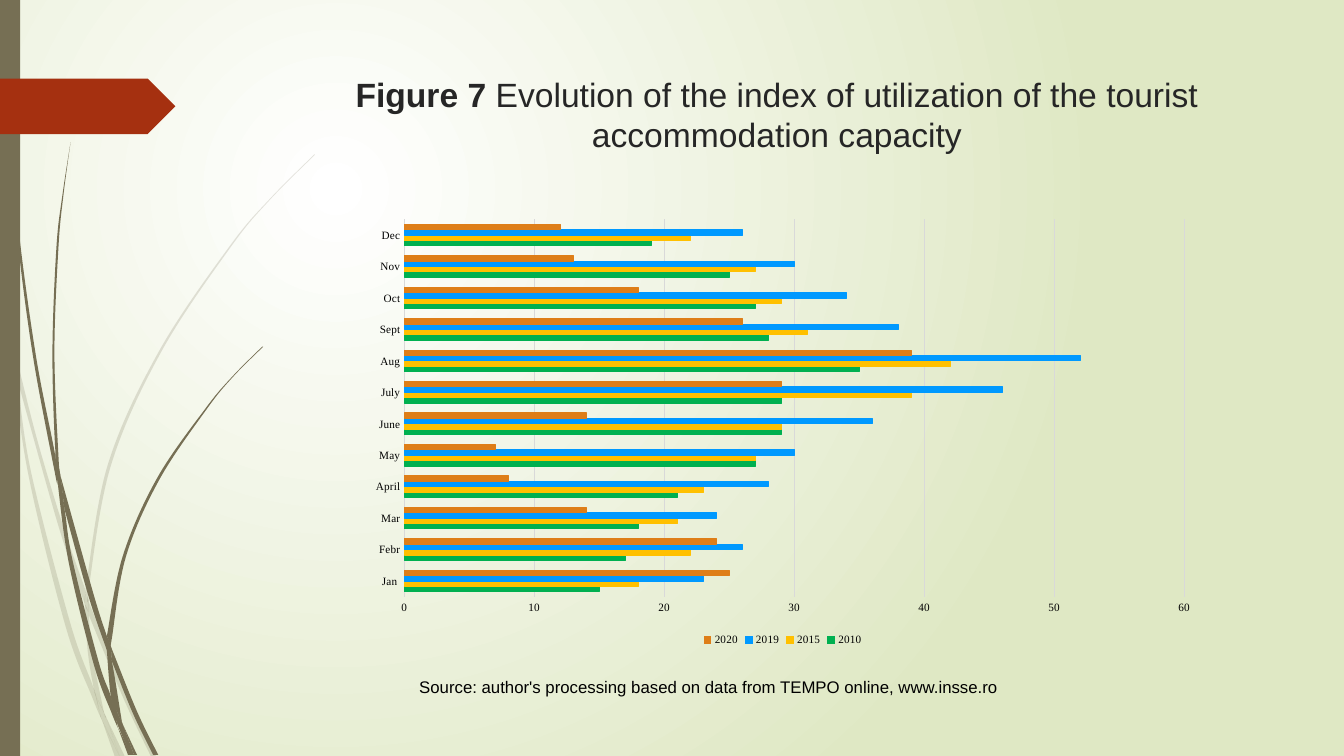
import pptx
import pptx.chart.data
import pptx.dml.color
import pptx.enum.chart
import pptx.enum.shapes
import pptx.enum.text
import pptx.oxml
import pptx.oxml.ns
import pptx.util

Inches, Pt = pptx.util.Inches, pptx.util.Pt
WIDTH, HEIGHT = Inches(13.33), Inches(7.5)
BROWN, RED, GREY, BLACK = "766F54", "A53010", "D9D9D9", "000000"


def paint(color_format, value):
    color_format.rgb = pptx.dml.color.RGBColor.from_string(value)


def bend(side, segments):
    """Turn the straight segments along one side into a smooth curve."""
    padded = [side[0], *side, side[-1]]
    for before, start, end, after, segment in zip(
            padded, padded[1:], padded[2:], padded[3:], segments):
        corner = segment[0]
        end_x, end_y = int(corner.get("x")), int(corner.get("y"))
        dx, dy = (end_x - Inches(end[0]), end_y - Inches(end[1]))
        controls = [
            (start[0] + (end[0] - before[0]) / 6, start[1] + (end[1] - before[1]) / 6),
            (end[0] - (after[0] - start[0]) / 6, end[1] - (after[1] - start[1]) / 6)]
        points = [(Inches(x) + dx, Inches(y) + dy) for x, y in controls]
        marks = "".join(f'<a:pt x="{x}" y="{y}"/>' for x, y in [*points, (end_x, end_y)])
        segment.getparent().replace(segment, pptx.oxml.parse_xml(
            f'<a:cubicBezTo {pptx.oxml.ns.nsdecls("a")}>{marks}</a:cubicBezTo>'))


deck = pptx.Presentation()
deck.slide_width, deck.slide_height = WIDTH, HEIGHT
page = deck.slides.add_slide(deck.slide_layouts[6])

# Background: a glow from the upper left
glow = page.background.fill
glow.gradient()
for stop, color in zip(glow.gradient_stops, ("FFFFFF", "DFE8C4")):
    paint(stop.color, color)
gradient = page._element.find(".//" + pptx.oxml.ns.qn("a:gradFill"))
gradient.replace(gradient.find(pptx.oxml.ns.qn("a:lin")), pptx.oxml.parse_xml(
    f'<a:path {pptx.oxml.ns.nsdecls("a")} path="circle">'
    '<a:fillToRect l="50000" t="50000" r="100000" b="100000"/></a:path>'))

# Grass blades: the two sides of each piece, from top to bottom, in inches
pale_blades = [
    ([(0, 2.82), (.09, 3.22), (.11, 3.5)], [(0, 2.99), (.1, 3.44), (.11, 3.5)]),
    ([(.14, 3.45), (.36, 4.33), (.62, 5.2), (.85, 5.86)],
     [(.17, 3.76), (.58, 5.22), (.84, 5.99)]),
    ([(.88, 5.96), (.92, 6.07), (1.27, 6.92), (1.55, 7.51)],
     [(.88, 6.1), (1.23, 6.94), (1.5, 7.51)]),
    ([(1.05, 7.11), (1.24, 7.51)], [(1.05, 7.11), (1.19, 7.51)]),
    ([(.11, 3.5), (.17, 3.76), (.31, 4.69), (.7, 6.19), (.93, 6.83), (.99, 7.07), (1.01, 7.14)],
     [(.11, 3.5), (.28, 4.7), (.65, 6.21), (.92, 6.93), (1.01, 7.14)]),
    ([(.84, 5.99), (.88, 6.1), (.91, 6.46), (1.03, 7.06), (1.05, 7.11)],
     [(.84, 5.99), (.87, 6.46), (.93, 6.83), (.96, 6.92), (1.05, 7.11)]),
    ([(3.12, 1.53), (2.68, 1.97), (2.28, 2.44), (1.58, 3.48), (1.07, 4.61), (.85, 5.84)],
     [(3.12, 1.54), (2.68, 1.98), (2.29, 2.45), (1.6, 3.49), (1.1, 4.62), (.88, 5.84),
      (.88, 5.96)]),
    ([(1.01, 7.14), (1.19, 7.51)], [(1.01, 7.14), (1.14, 7.51)]),
    ([(.85, 5.86), (.88, 5.96), (.88, 6.1)], [(.85, 5.86), (.84, 5.99), (.88, 6.08)]),
    ([(.93, 6.83), (.96, 6.92), (1.05, 7.11), (1.19, 7.51)],
     [(.93, 6.83), (.99, 7.07), (1.01, 7.14), (1.19, 7.51)]),
]
dark_blades = [
    ([(.04, 0), (.05, .48), (.08, 1.09), (.19, 2.32), (.36, 3.55), (.55, 4.53), (.57, 4.81)],
     [(.03, 0), (.04, .48), (.07, 1.1), (.17, 2.33), (.33, 3.55), (.56, 4.77)]),
    ([(.6, 4.72), (.93, 5.9), (1.06, 6.31)], [(.64, 5.05), (.88, 5.92), (1.06, 6.45)]),
    ([(1.1, 6.41), (1.13, 6.49), (1.36, 7.06), (1.57, 7.49)],
     [(1.11, 6.56), (1.32, 7.08), (1.52, 7.49)]),
    ([(.57, 4.77), (.64, 5.05), (.72, 5.56), (.98, 6.57), (1.1, 6.91), (1.17, 7.22)],
     [(.57, 4.77), (.68, 5.57), (.93, 6.59), (1.11, 7.08), (1.17, 7.22)]),
    ([(.7, 1.41), (.63, 1.93), (.58, 2.45), (.54, 3.49), (.58, 4.53), (.6, 4.72)],
     [(.7, 1.41), (.62, 1.93), (.56, 2.45), (.52, 3.49), (.55, 4.49), (.6, 4.72)]),
    ([(1.22, 7.19), (1.36, 7.49)], [(1.22, 7.19), (1.33, 7.49)]),
    ([(.55, 4.49), (.6, 4.72), (.64, 5.05)], [(.55, 4.53), (.57, 4.77), (.64, 5.05)]),
    ([(2.6, 3.44), (2.31, 3.73), (2.04, 4.05), (1.56, 4.74), (1.22, 5.51), (1.06, 6.31)],
     [(2.61, 3.44), (2.31, 3.74), (2.05, 4.06), (1.58, 4.76), (1.25, 5.52), (1.11, 6.33),
      (1.1, 6.41)]),
    ([(1.17, 7.22), (1.31, 7.49)], [(1.17, 7.22), (1.27, 7.49)]),
    ([(1.06, 6.45), (1.11, 6.56), (1.21, 7.16), (1.22, 7.19)],
     [(1.06, 6.45), (1.1, 6.91), (1.16, 7.06), (1.22, 7.19)]),
    ([(1.06, 6.31), (1.1, 6.41), (1.11, 6.56)], [(1.06, 6.31), (1.06, 6.45), (1.11, 6.56)]),
    ([(1.1, 6.91), (1.16, 7.06), (1.22, 7.19), (1.33, 7.49)],
     [(1.1, 6.91), (1.16, 7.17), (1.3, 7.49)]),
]
for blades, opacity in ((pale_blades, 20), (dark_blades, 100)):
    for down, far_side in blades:
        up = far_side[::-1]
        outline = [(Inches(x), Inches(y)) for x, y in down + up]
        builder = page.shapes.build_freeform(*outline[0])
        builder.add_line_segments(outline[1:])
        blade = builder.convert_to_shape()
        segments = list(blade._element.iter(pptx.oxml.ns.qn("a:lnTo")))
        bend(down, segments)
        bend(up, segments[len(down):])
        blade.shadow.inherit = False
        blade.line.fill.background()
        blade.fill.solid()
        paint(blade.fill.fore_color, BROWN)
        if opacity < 100:
            tint = blade._element.spPr.find(".//" + pptx.oxml.ns.qn("a:srgbClr"))
            tint.append(pptx.oxml.parse_xml(
                f'<a:alpha {pptx.oxml.ns.nsdecls("a")} val="{opacity * 1000}"/>'))

# Side bar and arrow tag
kinds = pptx.enum.shapes.MSO_SHAPE
for kind, top, width, height, color in (
        (kinds.RECTANGLE, 0, Inches(.2), HEIGHT, BROWN),
        (kinds.PENTAGON, Inches(.78), Inches(1.74), Inches(.55), RED)):
    block = page.shapes.add_shape(kind, 0, top, width, height)
    block.shadow.inherit = False
    block.line.fill.background()
    block.fill.solid()
    paint(block.fill.fore_color, color)

# Title
box = page.shapes.add_textbox(Inches(2.83), Inches(.68), Inches(9.75), Inches(1))
box.text_frame.word_wrap = True
para = box.text_frame.paragraphs[0]
para.alignment = pptx.enum.text.PP_ALIGN.CENTER
para.font.size, para.font.name = Pt(24), "Arial"
paint(para.font.color, "262626")
for text, bold in (
        ("Figure 7", True),
        (" Evolution of the index of utilization of the tourist accommodation capacity", False)):
    span = para.add_run()
    span.text, span.font.bold = text, bold

# Chart
series_table = [
    ("2010", "00B050", (15, 17, 18, 21, 27, 29, 29, 35, 28, 27, 25, 19)),
    ("2015", "FFC000", (18, 22, 21, 23, 27, 29, 39, 42, 31, 29, 27, 22)),
    ("2019", "0099FF", (23, 26, 24, 28, 30, 36, 46, 52, 38, 34, 30, 26)),
    ("2020", "DE7E18", (25, 24, 14, 8, 7, 14, 29, 39, 26, 18, 13, 12)),
]
data = pptx.chart.data.CategoryChartData()
data.categories = ["Jan ", "Febr", "Mar", "April", "May", "June",
                   "July", "Aug", "Sept", "Oct", "Nov", "Dec"]
for name, color, values in series_table:
    data.add_series(name, values)
chart = page.shapes.add_chart(
    pptx.enum.chart.XL_CHART_TYPE.BAR_CLUSTERED,
    Inches(3.56), Inches(2.09), Inches(8.41), Inches(4.36), data).chart
chart.has_title = False
chart.font.size, chart.font.name = Pt(8), "Times New Roman"
paint(chart.font.color, BLACK)
chart.has_legend = True
chart.legend.position = pptx.enum.chart.XL_LEGEND_POSITION.BOTTOM
chart.legend.include_in_layout = False
plot = chart.plots[0]
plot.vary_by_categories = False
plot.gap_width = 182
for series, (name, color, values) in zip(plot.series, series_table):
    series.format.fill.solid()
    paint(series.format.fill.fore_color, color)
    paint(series.format.line.color, color)
    series.format.line.width = Pt(.75)

months, scale = chart.category_axis, chart.value_axis
for axis in (months, scale):
    axis.major_tick_mark = axis.minor_tick_mark = pptx.enum.chart.XL_TICK_MARK.NONE
scale.minimum_scale, scale.maximum_scale, scale.major_unit = 0, 60, 10
scale.has_major_gridlines = True
scale.format.line.fill.background()
for line in (months.format.line, scale.major_gridlines.format.line):
    paint(line.color, GREY)
    line.width = Pt(.75)

# Source line
box = page.shapes.add_textbox(Inches(3.56), Inches(6.65), Inches(8.67), Inches(.31))
box.text_frame.word_wrap = True
para = box.text_frame.paragraphs[0]
para.text = "Source: author's processing based on data from TEMPO online, www.insse.ro"
para.line_spacing = 1.07
para.font.size, para.font.name = Pt(12), "Arial"
paint(para.font.color, BLACK)
para._p.get_or_add_pPr().set("indent", str(Inches(.5)))

deck.save("out.pptx")
